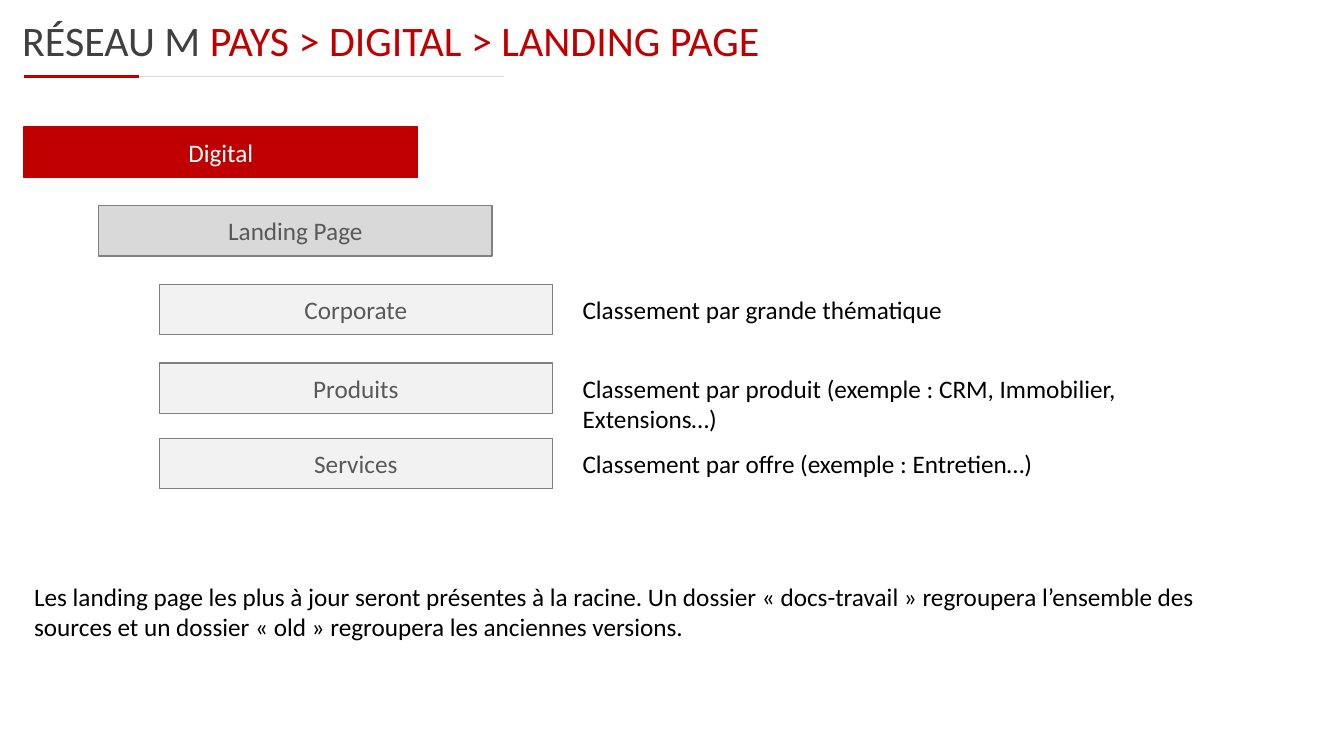
import pptx
import pptx.util
import pptx.dml.color
import pptx.enum.shapes
import pptx.enum.text
import pptx.oxml.ns
import lxml.etree

Inches = pptx.util.Inches
Alignment = pptx.enum.text.PP_ALIGN
Anchor = pptx.enum.text.MSO_ANCHOR
AutoSize = pptx.enum.text.MSO_AUTO_SIZE

COLORS = {
    "red": "C00000",
    "white": "FFFFFF",
    "black": "000000",
    "title": "404040",
    "label": "595959",
    "border": "808080",
    "silver": "D9D9D9",
    "pale": "F2F2F2",
}

BOX_WIDTH, BOX_HEIGHT = 3.9, 0.5
NOTE_LEFT, NOTE_WIDTH, NOTE_OFFSET = 5.68, 6.1, 0.05

# label, left, top, fill, border, text colour
PARENT_FOLDERS = [
    ("Digital", 0.24, 1.26, "red", "red", "white"),
    ("Landing Page", 0.98, 2.04, "silver", "border", "label"),
]

# label, top, note, note height
SUBFOLDERS = [
    ("Corporate", 2.82, "Classement par grande thématique", 0.4),
    ("Produits", 3.6, "Classement par produit (exemple : CRM, Immobilier, Extensions…)", 0.71),
    ("Services", 4.35, "Classement par offre (exemple : Entretien…)", 0.4),
]

VERSIONING_NOTE = (
    "Les landing page les plus à jour seront présentes à la racine. "
    "Un dossier « docs-travail » regroupera l’ensemble des sources "
    "et un dossier « old » regroupera les anciennes versions."
)


def rgb(name):
    return pptx.dml.color.RGBColor.from_string(COLORS[name])


class SlideBuilder:
    font_name = "Calibri"
    body_size = 18
    title_size = 30

    def __init__(self, presentation):
        self.slide = presentation.slides.add_slide(presentation.slide_layouts[5])

    def apply(self, target, formats):
        for attribute, value in formats.items():
            setattr(target, attribute, value)

    def add_run(self, paragraph, text, color, size):
        run = paragraph.add_run()
        run.text = text
        self.apply(run.font, {"name": self.font_name, "size": pptx.util.Pt(size)})
        run.font.color.rgb = rgb(color)

    def title(self, runs, left, top, width, height):
        shape = self.slide.shapes.title
        self.apply(shape, {
            "left": Inches(left), "top": Inches(top),
            "width": Inches(width), "height": Inches(height),
        })
        self.apply(shape.text_frame, {
            "vertical_anchor": Anchor.TOP, "auto_size": AutoSize.NONE, "word_wrap": True,
        })
        paragraph = shape.text_frame.paragraphs[0]
        paragraph.alignment = Alignment.LEFT
        for text, color in runs:
            self.add_run(paragraph, text, color, self.title_size)

    def rule(self, start, end, top, color, width):
        connector = self.slide.shapes.add_connector(
            pptx.enum.shapes.MSO_CONNECTOR.STRAIGHT,
            Inches(start), Inches(top), Inches(end), Inches(top))
        connector.line.color.rgb = rgb(color)
        connector.line.width = pptx.util.Pt(width)
        properties = connector._element.spPr
        lxml.etree.SubElement(properties, pptx.oxml.ns.qn("a:effectLst"))

    def folder(self, label, left, top, fill, border, color):
        shape = self.slide.shapes.add_shape(
            pptx.enum.shapes.MSO_SHAPE.RECTANGLE,
            Inches(left), Inches(top), Inches(BOX_WIDTH), Inches(BOX_HEIGHT))
        shape.shadow.inherit = False
        shape.fill.solid()
        shape.fill.fore_color.rgb = rgb(fill)
        shape.line.color.rgb = rgb(border)
        shape.line.width = pptx.util.Pt(1)
        self.apply(shape.text_frame, {"vertical_anchor": Anchor.MIDDLE, "word_wrap": True})
        paragraph = shape.text_frame.paragraphs[0]
        paragraph.alignment = Alignment.CENTER
        self.add_run(paragraph, label, color, self.body_size)

    def note(self, text, left, top, width, height):
        box = self.slide.shapes.add_textbox(
            Inches(left), Inches(top), Inches(width), Inches(height))
        self.apply(box.text_frame, {
            "word_wrap": True, "auto_size": AutoSize.SHAPE_TO_FIT_TEXT,
        })
        self.add_run(box.text_frame.paragraphs[0], text, "black", self.body_size)


def main():
    presentation = pptx.Presentation()
    presentation.slide_width = Inches(13.33)
    presentation.slide_height = Inches(7.5)
    builder = SlideBuilder(presentation)

    builder.title([("RÉSEAU M ", "title"), ("PAYS > DIGITAL > LANDING PAGE", "red")],
                  0.12, 0.09, 12.72, 1.49)
    builder.rule(1.38, 5, 0.76, "silver", 0.25)
    builder.rule(0.24, 1.38, 0.76, "red", 2.5)

    for folder in PARENT_FOLDERS:
        builder.folder(*folder)
    for label, top, note, note_height in SUBFOLDERS:
        builder.folder(label, 1.58, top, "pale", "border", "label")
        builder.note(note, NOTE_LEFT, top + NOTE_OFFSET, NOTE_WIDTH, note_height)

    builder.note(VERSIONING_NOTE, 0.24, 5.72, 12, 0.71)
    presentation.save("out.pptx")


if __name__ == "__main__":
    main()
